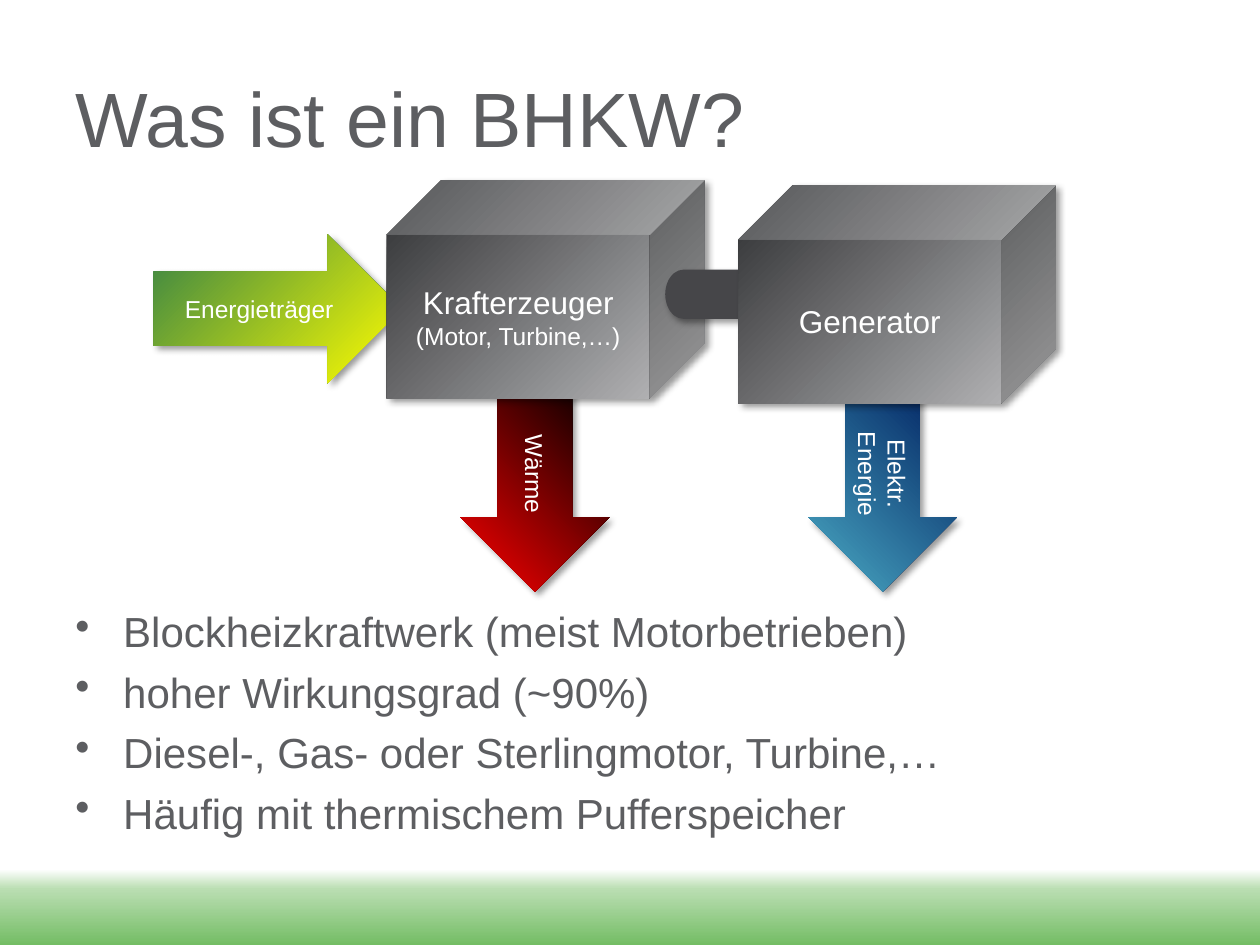
from dataclasses import dataclass

from pptx import Presentation
from pptx.dml.color import RGBColor
from pptx.enum.shapes import MSO_SHAPE
from pptx.enum.text import MSO_ANCHOR, PP_ALIGN
from pptx.oxml import parse_xml
from pptx.oxml.ns import nsdecls
from pptx.util import Inches, Pt


@dataclass(frozen=True)
class Theme:
    font: str = "Arial"
    text: str = "5D5E61"
    light: str = "FFFFFF"
    shaft: str = "464649"
    footer: tuple = ((0, "FFFFFF"), (26, "BADEB2"), (100, "74BD65"))
    machine: tuple = ((0, "2E2F31"), (100, "BEBEC0"))
    fuel: tuple = ((0, "378246"), (100, "FFFF00"))
    heat: tuple = ((0, "000000"), (100, "FF0000"))
    power: tuple = ((0, "002060"), (100, "4BACC6"))
    title_size: int = 44
    bullet_size: int = 24
    machine_size: int = 18
    label_size: int = 14


theme = Theme()
SHADOW = (
    f'<a:effectLst {nsdecls("a")}><a:outerShdw blurRad="{Pt(4)}" dist="{Pt(3)}" '
    'dir="2700000" algn="tl" rotWithShape="0"><a:srgbClr val="000000">'
    '<a:alpha val="40000"/></a:srgbClr></a:outerShdw></a:effectLst>'
)


def write_text(frame, lines, sizes, color=theme.light, align=PP_ALIGN.CENTER,
               anchor=MSO_ANCHOR.MIDDLE, bullet=None, gap=0):
    frame.word_wrap = True
    frame.vertical_anchor = anchor
    for i, (line, size) in enumerate(zip(lines, sizes)):
        paragraph = frame.paragraphs[0] if i == 0 else frame.add_paragraph()
        paragraph.alignment = align
        paragraph.space_before = Pt(gap if i else 0)
        if bullet:
            properties = paragraph._p.get_or_add_pPr()
            properties.set("marL", str(Inches(0.38)))
            properties.set("indent", str(-Inches(0.38)))
            properties.append(parse_xml(f'<a:buChar {nsdecls("a")} char="{bullet}"/>'))
        run = paragraph.add_run()
        run.text = line
        run.font.name = theme.font
        run.font.size = Pt(size)
        run.font.color.rgb = RGBColor.from_string(color)


def add_block(kind, box, stops, angle=45, rotation=0, shadow=True):
    """Add a borderless shape filled with a gradient, or plainly if stops is one colour."""
    block = slide.shapes.add_shape(kind, *map(Inches, box))
    block.rotation = rotation
    block.line.fill.background()
    block.shadow.inherit = False
    properties = block._element.spPr
    if shadow:
        effects = properties.find("{*}effectLst")
        properties.replace(effects, parse_xml(SHADOW))
    if isinstance(stops, str):
        block.fill.solid()
        block.fill.fore_color.rgb = RGBColor.from_string(stops)
        return block
    stop_list = "".join(
        f'<a:gs pos="{position * 1000}"><a:srgbClr val="{color}"/></a:gs>'
        for position, color in stops
    )
    block.fill.background()
    properties.replace(properties.find("{*}noFill"), parse_xml(
        f'<a:gradFill {nsdecls("a")} rotWithShape="1"><a:gsLst>{stop_list}</a:gsLst>'
        f'<a:lin ang="{angle * 60000}" scaled="0"/></a:gradFill>'))
    return block


presentation = Presentation()
presentation.slide_width = Inches(10)
presentation.slide_height = Inches(7.5)
slide = presentation.slides.add_slide(presentation.slide_layouts[5])

add_block(MSO_SHAPE.RECTANGLE, (0, 6.9, 10, 0.6), theme.footer, angle=90, shadow=False)

title = slide.shapes.title
title.left, title.top, title.width, title.height = map(Inches, (0.5, 0.3, 7.02, 1.25))
write_text(title.text_frame, ["Was ist ein BHKW?"], [theme.title_size],
           color=theme.text, align=PP_ALIGN.LEFT)
title_font = title.text_frame.paragraphs[0].runs[0]._r.rPr
title_font.find("{*}solidFill").addnext(parse_xml(SHADOW))

facts = [
    "Blockheizkraftwerk (meist Motorbetrieben)",
    "hoher Wirkungsgrad (~90%)",
    "Diesel-, Gas- oder Sterlingmotor, Turbine,…",
    "Häufig mit thermischem Pufferspeicher",
]
fact_list = slide.shapes.add_textbox(*map(Inches, (0.5, 4.86, 9, 1.84)))
write_text(fact_list.text_frame, facts, [theme.bullet_size] * len(facts), color=theme.text,
           align=PP_ALIGN.LEFT, anchor=MSO_ANCHOR.BOTTOM, bullet="•", gap=5.8)

# Back to front: flows, then engine, shaft and generator
flows = [
    ("Elektr. Energie", (6.22, 3.32, 1.57, 1.18), theme.power, 90),
    ("Energieträger", (1.22, 1.86, 1.97, 1.18), theme.fuel, 0),
    ("Wärme", (3.46, 3.32, 1.57, 1.18), theme.heat, 90),
]
for label, box, stops, rotation in flows:
    flow = add_block(MSO_SHAPE.RIGHT_ARROW, box, stops, rotation=rotation)
    write_text(flow.text_frame, [label], [theme.label_size])

engine = add_block(MSO_SHAPE.CUBE, (3.07, 1.43, 2.52, 1.73), theme.machine)
write_text(engine.text_frame, ["Krafterzeuger", "(Motor, Turbine,…)"],
           [theme.machine_size, theme.label_size])

add_block(MSO_SHAPE.FLOWCHART_DIRECT_ACCESS_STORAGE, (5.28, 2.14, 0.87, 0.39), theme.shaft)

generator = add_block(MSO_SHAPE.CUBE, (5.86, 1.47, 2.52, 1.73), theme.machine)
write_text(generator.text_frame, ["Generator"], [theme.machine_size])

presentation.save("out.pptx")
